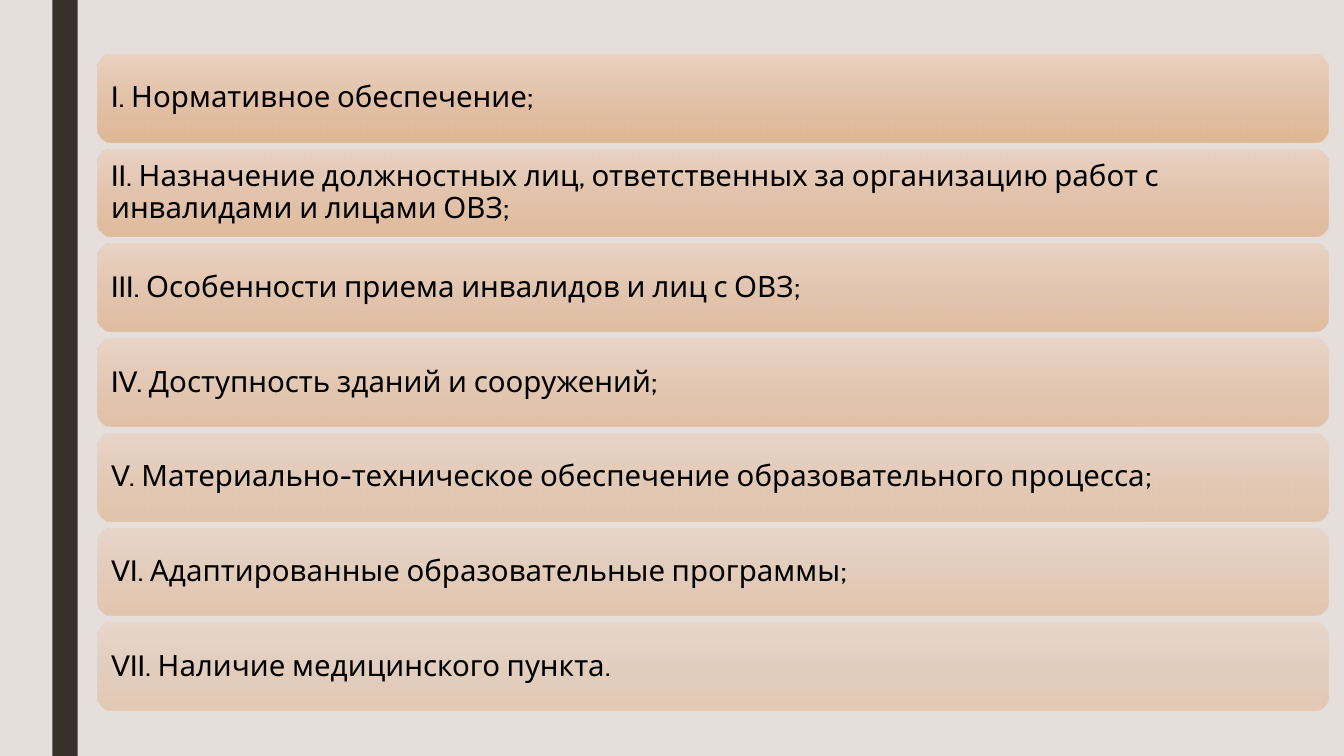
"""Build a slide listing seven areas of inclusive education as stacked bars."""
import lxml.etree
import pptx
import pptx.dml.color
import pptx.enum.shapes
import pptx.enum.text
import pptx.oxml.ns
import pptx.util

AREAS = [
    "I. Нормативное обеспечение;",
    "II. Назначение должностных лиц, ответственных за организацию работ с инвалидами и лицами ОВЗ;",
    "III. Особенности приема инвалидов и лиц с ОВЗ;",
    "IV. Доступность зданий и сооружений;",
    "V. Материально-техническое обеспечение образовательного процесса;",
    "VI. Адаптированные образовательные программы;",
    "VII. Наличие медицинского пункта.",
]
COLOURS = {
    "background": "E5DEDB",
    "stripe": "39302A",
    "text": "000000",
    "bar_top": "EBD1BF",
    "bar_middle": "E2BFA4",
    "bar_bottom": "E0B48E",
}
BAR_STOPS = [(0, "bar_top"), (50, "bar_middle"), (100, "bar_bottom")]
FONT = "Cabin"
TEXT_SIZE = 21
SLIDE_WIDTH, SLIDE_HEIGHT = 13.33, 7.5
BAR_LEFT, BAR_TOP, BAR_WIDTH, BAR_HEIGHT = 0.97, 0.54, 12.21, 0.87
BAR_STEP = 0.94
TEXT_INSET = 0.09
FIRST_OPACITY, LAST_OPACITY = 90, 50

Inches = pptx.util.Inches
Shapes = pptx.enum.shapes.MSO_SHAPE
qn = pptx.oxml.ns.qn


def colour(name):
    return pptx.dml.color.RGBColor.from_string(COLOURS[name])


def add_plain_shape(page, kind, left, top, width, height):
    shape = page.shapes.add_shape(
        kind, Inches(left), Inches(top), Inches(width), Inches(height)
    )
    shape.shadow.inherit = False
    shape.line.fill.background()
    return shape


def fill_gradient(shape, opacity):
    shape.fill.gradient()
    shape.fill.gradient_angle = 270
    stops = shape.element.spPr.find(".//" + qn("a:gsLst"))
    stops.clear()
    for position, name in BAR_STOPS:
        stop = lxml.etree.SubElement(stops, qn("a:gs"), pos=str(position * 1000))
        tint = lxml.etree.SubElement(stop, qn("a:srgbClr"), val=COLOURS[name])
        lxml.etree.SubElement(tint, qn("a:alpha"), val=str(round(opacity * 1000)))


def write_text(shape, text):
    frame = shape.text_frame
    frame.word_wrap = True
    frame.vertical_anchor = pptx.enum.text.MSO_ANCHOR.MIDDLE
    frame.margin_left = frame.margin_right = Inches(TEXT_INSET)
    frame.margin_top = frame.margin_bottom = Inches(TEXT_INSET)
    para = frame.paragraphs[0]
    para.text = text
    para.alignment = pptx.enum.text.PP_ALIGN.LEFT
    para.line_spacing = 0.9
    para.font.name = FONT
    para.font.size = pptx.util.Pt(TEXT_SIZE)
    para.font.color.rgb = colour("text")


def main():
    deck = pptx.Presentation()
    deck.slide_width = Inches(SLIDE_WIDTH)
    deck.slide_height = Inches(SLIDE_HEIGHT)
    page = deck.slides.add_slide(deck.slide_layouts[6])
    page.background.fill.solid()
    page.background.fill.fore_color.rgb = colour("background")

    stripe = add_plain_shape(page, Shapes.RECTANGLE, 0.52, 0, 0.25, SLIDE_HEIGHT)
    stripe.fill.solid()
    stripe.fill.fore_color.rgb = colour("stripe")

    opacity_step = (LAST_OPACITY - FIRST_OPACITY) / (len(AREAS) - 1)
    for index, area in enumerate(AREAS):
        top = BAR_TOP + index * BAR_STEP
        bar = add_plain_shape(
            page, Shapes.ROUNDED_RECTANGLE, BAR_LEFT, top, BAR_WIDTH, BAR_HEIGHT
        )
        fill_gradient(bar, FIRST_OPACITY + index * opacity_step)
        write_text(bar, area)

    deck.save("out.pptx")


if __name__ == "__main__":
    main()
